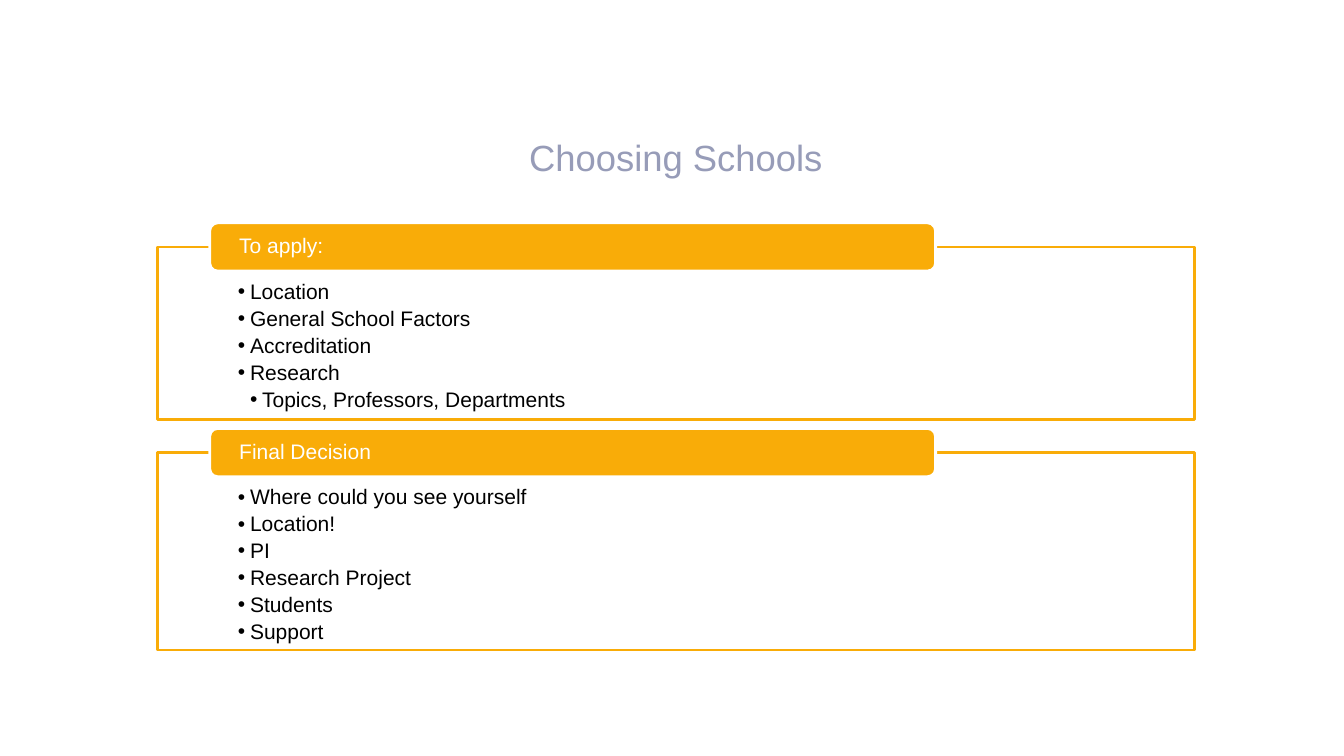
"""Build the Choosing Schools slide."""
from lxml import etree
from pptx import Presentation
from pptx.dml.color import RGBColor
from pptx.enum.shapes import MSO_SHAPE
from pptx.enum.text import MSO_ANCHOR, PP_ALIGN
from pptx.oxml.ns import qn
from pptx.util import Pt

PX = 9144
FONT = "Arial"
ORANGE = RGBColor(0xF9, 0xAC, 0x08)
WHITE = RGBColor(0xFF, 0xFF, 0xFF)
BLACK = RGBColor(0x00, 0x00, 0x00)
LAVENDER = RGBColor(0x97, 0x9C, 0xB8)
RECTANGLE = MSO_SHAPE.RECTANGLE
ROUNDED = MSO_SHAPE.ROUNDED_RECTANGLE
TOP, MIDDLE, BOTTOM = MSO_ANCHOR.TOP, MSO_ANCHOR.MIDDLE, MSO_ANCHOR.BOTTOM
LEFT, CENTER = PP_ALIGN.LEFT, PP_ALIGN.CENTER

PANEL_LEFT, PANEL_WIDTH = 156, 1029
HEADER_LEFT, HEADER_WIDTH, HEADER_HEIGHT = 208, 720, 48
BULLET_INDENT = 12
SECTIONS = [
    (245, 171, "To apply:", [
        ("Location", 1), ("General School Factors", 1), ("Accreditation", 1),
        ("Research", 1), ("Topics, Professors, Departments", 2)]),
    (449, 196, "Final Decision", [
        ("Where could you see yourself", 1), ("Location!", 1), ("PI", 1),
        ("Research Project", 1), ("Students", 1), ("Support", 1)]),
]


def set_frame(shape, anchor, left, top, right, bottom):
    """Set wrapping, anchor and margins in px, and return the text frame."""
    frame = shape.text_frame
    frame.word_wrap = True
    frame.vertical_anchor = anchor
    frame.margin_left, frame.margin_top = left * PX, top * PX
    frame.margin_right, frame.margin_bottom = right * PX, bottom * PX
    return frame


def add_run(paragraph, text, size, color, alignment=LEFT):
    """Add one run of text in the slide font."""
    paragraph.alignment = alignment
    run = paragraph.add_run()
    run.text = text
    run.font.name = FONT
    run.font.size = Pt(size)
    run.font.color.rgb = color


def add_bullet(paragraph, level):
    """Give a paragraph a hanging black bullet at its level."""
    paragraph.level = level
    properties = paragraph._p.get_or_add_pPr()
    properties.set("marL", str(BULLET_INDENT * level * PX))
    properties.set("indent", str(-BULLET_INDENT * PX))
    color = etree.SubElement(properties, qn("a:buClr"))
    etree.SubElement(color, qn("a:srgbClr"), val=str(BLACK))
    etree.SubElement(properties, qn("a:buFont"), typeface=FONT)
    etree.SubElement(properties, qn("a:buChar"), char="•")
    paragraph.line_spacing = 0.9
    paragraph.space_before = Pt(0)
    paragraph.space_after = Pt(3)


def add_box(slide, kind, left, top, width, height, fill, line):
    """Add a filled and outlined shape without a shadow."""
    shape = slide.shapes.add_shape(
        kind, left * PX, top * PX, width * PX, height * PX)
    shape.shadow.inherit = False
    shape.fill.solid()
    shape.fill.fore_color.rgb = fill
    shape.line.color.rgb = line
    shape.line.width = Pt(2)
    return shape


def add_title(slide, text):
    """Add the centred slide title."""
    title = slide.shapes.add_textbox(120 * PX, 87 * PX, 1101 * PX, 100 * PX)
    frame = set_frame(title, BOTTOM, 10, 10, 10, 10)
    add_run(frame.paragraphs[0], text, 26, LAVENDER, CENTER)


def add_section(slide, top, height, heading, items):
    """Add a bulleted panel with its header straddling the top edge."""
    panel = add_box(slide, RECTANGLE, PANEL_LEFT, top, PANEL_WIDTH, height,
                    WHITE, ORANGE)
    frame = set_frame(panel, TOP, 80, 34, 80, 12)
    for index, (text, level) in enumerate(items):
        paragraph = frame.add_paragraph() if index else frame.paragraphs[0]
        add_bullet(paragraph, level)
        add_run(paragraph, text, 15, BLACK)

    header = add_box(slide, ROUNDED, HEADER_LEFT, top - HEADER_HEIGHT // 2,
                     HEADER_WIDTH, HEADER_HEIGHT, ORANGE, WHITE)
    paragraph = set_frame(header, MIDDLE, 27, 0, 27, 0).paragraphs[0]
    paragraph.line_spacing = 0.9
    add_run(paragraph, heading, 15, WHITE)


def main():
    """Build and save the presentation."""
    presentation = Presentation()
    presentation.slide_width = 1333 * PX
    presentation.slide_height = 750 * PX
    slide = presentation.slides.add_slide(presentation.slide_layouts[6])
    add_title(slide, "Choosing Schools")
    for section in SECTIONS:
        add_section(slide, *section)
    presentation.save("out.pptx")


if __name__ == "__main__":
    main()
